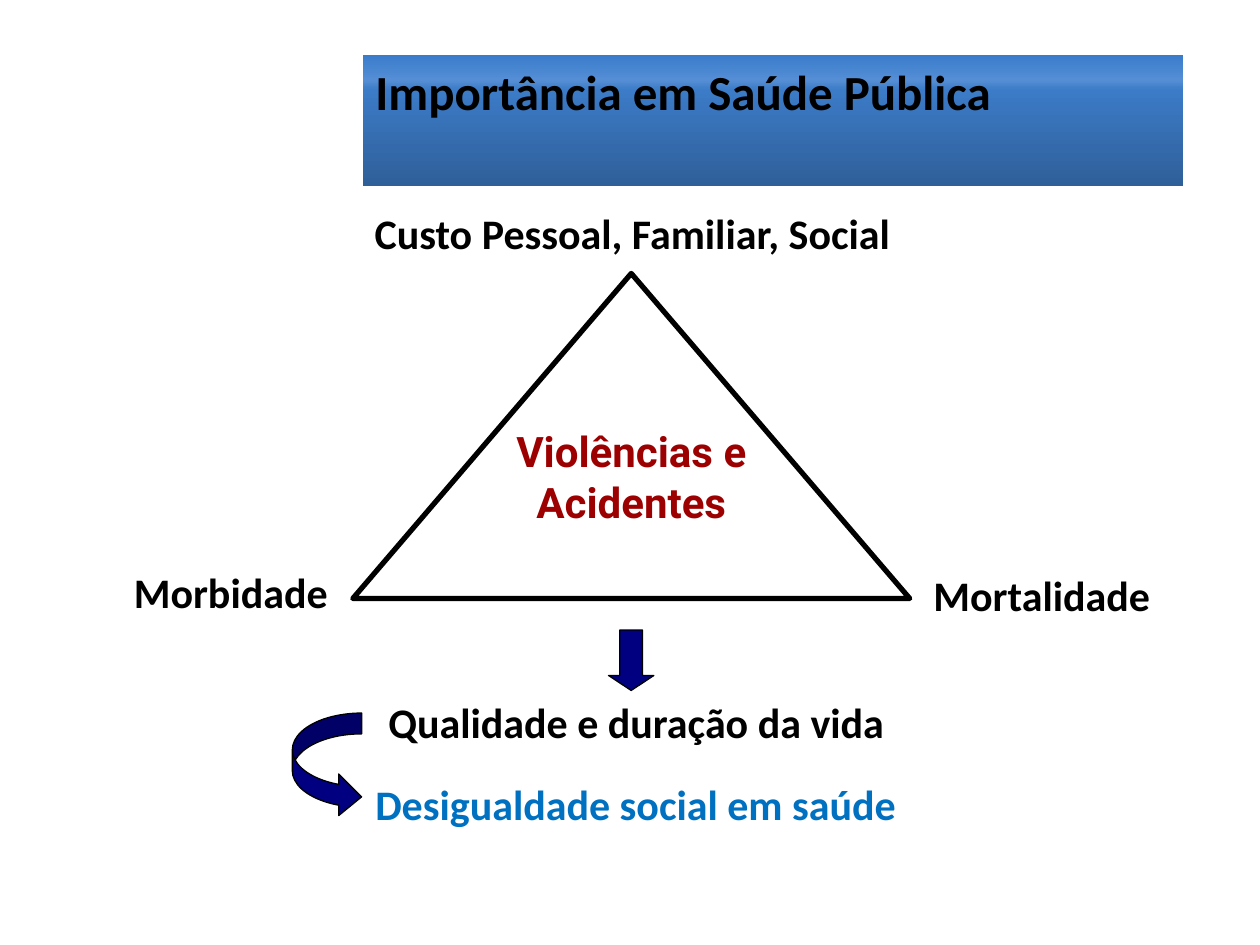
"""Build the slide on violence and accidents as a public health matter."""
import pptx
import pptx.util
import pptx.dml.color
import pptx.enum.shapes
import pptx.enum.text
import pptx.oxml
import pptx.oxml.ns

Inches = pptx.util.Inches
Pt = pptx.util.Pt
Kind = pptx.enum.shapes.MSO_SHAPE
Align = pptx.enum.text.PP_ALIGN
Fit = pptx.enum.text.MSO_AUTO_SIZE

HEX = {
    "black": "000000", "white": "FFFFFF", "red": "9C0000",
    "navy": "000080", "blue": "0070C0",
}
TITLE = "Importância em Saúde Pública"
BAND = [(0, "2F5F99"), (74, "3C7BC7"), (74, "3D7CC7"), (81, "558ED5"), (100, "3A7CCB")]
LABELS = [
    ("Mortalidade", (7.31, 4.47, 2.08, 0.5), {}),
    ("Morbidade", (0.78, 4.45, 1.92, 0.5), {"align": Align.RIGHT}),
    ("Violências e Acidentes", (3.3, 3.33, 3.42, 0.91),
     {"align": Align.CENTER, "face": "Roboto", "color": "red"}),
    ("Custo Pessoal, Familiar, Social", (1.87, 1.6, 6.3, 0.5), {"align": Align.CENTER}),
    ("Qualidade e duração da vida", (2.06, 5.48, 5.98, 0.5), {"align": Align.CENTER}),
    ("Desigualdade social em saúde", (2.88, 6.13, 4.38, 0.51),
     {"color": "blue", "wrap": False}),
]
SHAPES = [
    (Kind.ISOSCELES_TRIANGLE, (2.8, 2.17, 4.42, 2.58), [0.5], "white", 3),
    (Kind.DOWN_ARROW, (4.83, 5, 0.36, 0.48), [0.5, 0.33], "navy", 0.75),
    (Kind.CURVED_RIGHT_ARROW, (2.32, 5.66, 0.55, 0.83), [0.3, 0.6, 0.33], "navy", 0.75),
]


def tint(name):
    return pptx.dml.color.RGBColor.from_string(HEX[name])


def write(shape, text, size=24, face="Calibri", color="black", align=Align.LEFT, wrap=True):
    frame = shape.text_frame
    frame.word_wrap = wrap
    frame.auto_size = Fit.NONE
    frame.vertical_anchor = pptx.enum.text.MSO_ANCHOR.TOP
    para = frame.paragraphs[0]
    para.alignment = align
    run = para.add_run()
    run.text = text
    run.font.size = Pt(size)
    run.font.name = face
    run.font.bold = True
    run.font.color.rgb = tint(color)


def shade(shape, stops):
    shape.fill.gradient()
    shape.fill.gradient_angle = 90
    qn = pptx.oxml.ns.qn
    listing = shape.element.spPr.find(".//" + qn("a:gsLst"))
    for old in list(listing):
        listing.remove(old)
    for pos, code in stops:
        listing.append(pptx.oxml.parse_xml(
            f'<a:gs {pptx.oxml.ns.nsdecls("a")} pos="{pos * 1000}">'
            f'<a:srgbClr val="{code}"/></a:gs>'))


def draw(slide, kind, box, adjust, fill, width):
    shape = slide.shapes.add_shape(kind, *map(Inches, box))
    shape.shadow.inherit = False
    for i, value in enumerate(adjust):
        shape.adjustments[i] = value
    shape.fill.solid()
    shape.fill.fore_color.rgb = tint(fill)
    shape.line.color.rgb = tint("black")
    shape.line.width = Pt(width)


def main():
    deck = pptx.Presentation()
    deck.slide_width, deck.slide_height = Inches(10), Inches(7.5)
    slide = deck.slides.add_slide(deck.slide_layouts[5])
    title = slide.shapes.title
    title.left, title.top, title.width, title.height = map(Inches, (2.88, 0.44, 6.51, 1.04))
    shade(title, BAND)
    write(title, TITLE, size=28)
    for item in SHAPES:
        draw(slide, *item)
    for text, box, style in LABELS:
        write(slide.shapes.add_textbox(*map(Inches, box)), text, **style)
    deck.save("out.pptx")


if __name__ == "__main__":
    main()
